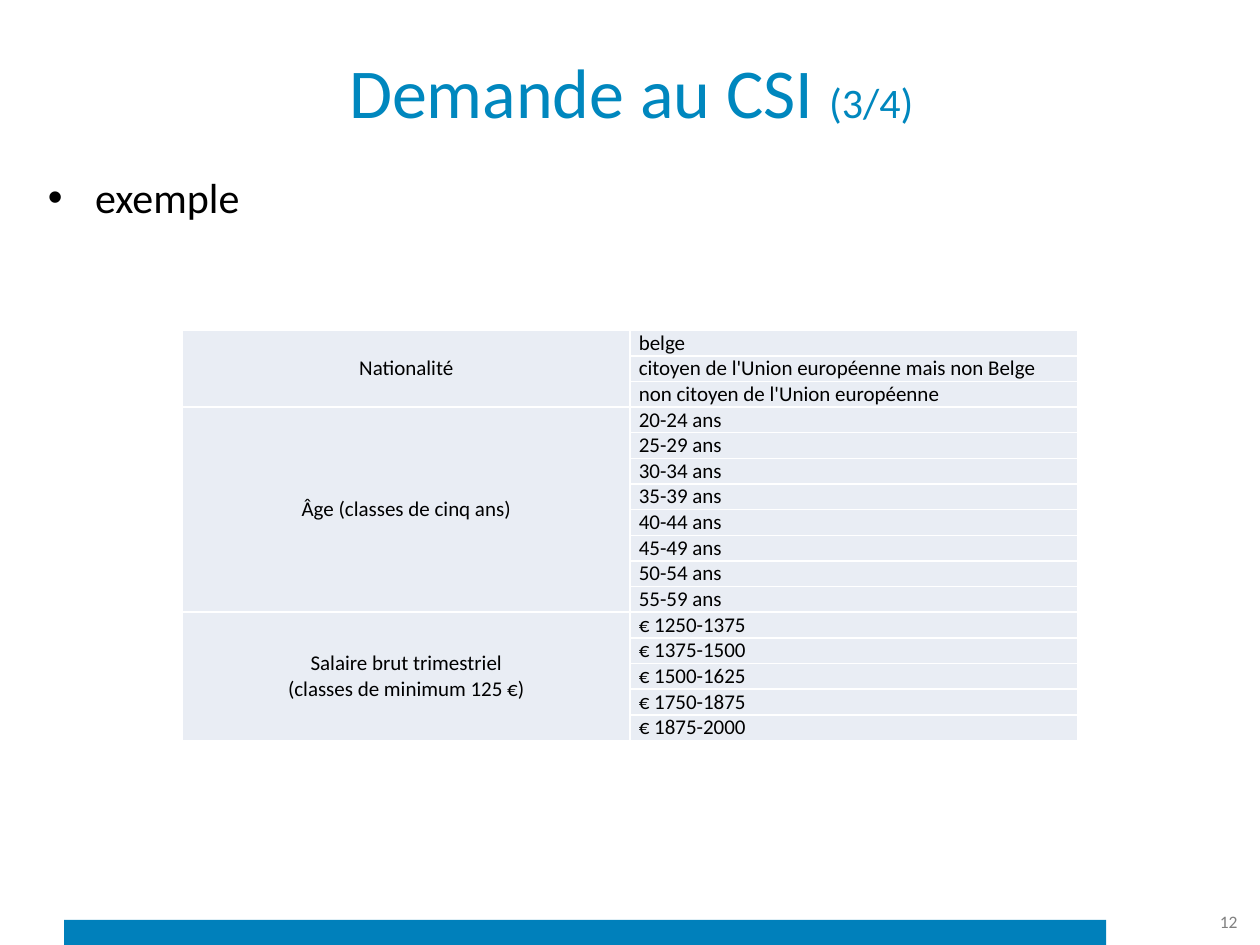
from lxml import etree
from pptx import Presentation
from pptx.dml.color import RGBColor
from pptx.enum.shapes import MSO_SHAPE
from pptx.enum.text import MSO_ANCHOR, MSO_AUTO_SIZE, PP_ALIGN
from pptx.oxml.ns import qn
from pptx.util import Inches, Pt

RECTANGLE = MSO_SHAPE.RECTANGLE
TOP, MIDDLE = MSO_ANCHOR.TOP, MSO_ANCHOR.MIDDLE
CENTER, RIGHT, JUSTIFY = PP_ALIGN.CENTER, PP_ALIGN.RIGHT, PP_ALIGN.JUSTIFY
NO_AUTOFIT = MSO_AUTO_SIZE.NONE

BAR_BLUE = RGBColor(0x00, 0x80, 0xBB)
TITLE_BLUE = RGBColor(0x00, 0x87, 0xBE)
CELL_BLUE = RGBColor(0xE9, 0xED, 0xF4)
BLACK = RGBColor(0, 0, 0)
GRAY = RGBColor(0x80, 0x80, 0x80)
WHITE = RGBColor(0xFF, 0xFF, 0xFF)

GRID_COLUMNS, GRID_ROWS = 100, 75

CRITERIA = {
    "Nationalité": [
        "belge",
        "citoyen de l'Union européenne mais non Belge",
        "non citoyen de l'Union européenne",
    ],
    "Âge (classes de cinq ans)": [f"{age}-{age + 4} ans" for age in range(20, 60, 5)],
    "Salaire brut trimestriel\n(classes de minimum 125 €)": [
        f"€ {salary}-{salary + 125}" for salary in (1250, 1375, 1500, 1750, 1875)
    ],
}


def apply(target, values):
    for name, value in values.items():
        setattr(target, name, value)


class SlideBuilder:
    """Places styled elements on a slide, measured in grid columns and rows."""

    font_name = "Calibri"

    def __init__(self, presentation):
        self.column = presentation.slide_width / GRID_COLUMNS
        self.row = presentation.slide_height / GRID_ROWS
        self.slide = presentation.slides.add_slide(presentation.slide_layouts[1])

    def area(self, left, top, width, height):
        return (round(left * self.column), round(top * self.row),
                round(width * self.column), round(height * self.row))

    def fill_frame(self, shape, runs, color, alignment, anchor):
        """Fill the first paragraph of a shape with (text, size) runs."""
        frame = shape.text_frame
        apply(frame, {"word_wrap": True, "auto_size": NO_AUTOFIT,
                      "vertical_anchor": anchor})
        paragraph = frame.paragraphs[0]
        apply(paragraph, {"alignment": alignment, "space_before": Pt(0)})
        for text, size in runs:
            run = paragraph.add_run()
            run.text = text
            apply(run.font, {"name": self.font_name, "size": Pt(size)})
            run.font.color.rgb = color

    def placeholder(self, index, area, runs, color, alignment, anchor):
        shape = self.slide.placeholders[index]
        apply(shape, dict(zip(("left", "top", "width", "height"), self.area(*area))))
        self.fill_frame(shape, runs, color, alignment, anchor)

    def text(self, area, runs, color, alignment, anchor):
        box = self.slide.shapes.add_textbox(*self.area(*area))
        self.fill_frame(box, runs, color, alignment, anchor)

    def bar(self, area, color):
        bar = self.slide.shapes.add_shape(RECTANGLE, *self.area(*area))
        bar.shadow.inherit = False
        bar.fill.solid()
        bar.fill.fore_color.rgb = color
        bar.line.fill.background()

    def cell(self, cell, text, alignment, anchor):
        apply(cell, {"margin_left": Inches(0.07), "margin_right": Inches(0.07),
                     "margin_top": 0, "margin_bottom": 0, "vertical_anchor": anchor})
        properties = cell._tc.get_or_add_tcPr()
        for side in ("a:lnL", "a:lnR", "a:lnT", "a:lnB"):
            line = etree.SubElement(properties, qn(side), w=str(Pt(1)))
            solid = etree.SubElement(line, qn("a:solidFill"))
            etree.SubElement(solid, qn("a:srgbClr"), val=str(WHITE))
        cell.fill.solid()
        cell.fill.fore_color.rgb = CELL_BLUE
        cell.text = text
        for paragraph in cell.text_frame.paragraphs:
            paragraph.alignment = alignment
            apply(paragraph.font, {"name": self.font_name, "size": Pt(12)})
            paragraph.font.color.rgb = BLACK

    def grouped_table(self, area, groups):
        """Table whose first column merges over the classes of each group."""
        row_count = sum(len(classes) for classes in groups.values())
        table = self.slide.shapes.add_table(row_count, 2, *self.area(*area)).table
        apply(table, {"first_row": False, "horz_banding": False})
        first = 0
        for criterion, classes in groups.items():
            last = first + len(classes) - 1
            for offset, label in enumerate(classes):
                self.cell(table.cell(first + offset, 0),
                          "" if offset else criterion, CENTER, MIDDLE)
                self.cell(table.cell(first + offset, 1), label, JUSTIFY, TOP)
            table.cell(first, 0).merge(table.cell(last, 0))
            first = last + 1


def main():
    presentation = Presentation()
    apply(presentation, {"slide_width": Inches(10), "slide_height": Inches(7.5)})
    builder = SlideBuilder(presentation)
    builder.bar((5.1, 73, 82.7, 2), BAR_BLUE)
    builder.placeholder(0, (5.1, 2.1, 90, 10.1),
                        [("Demande au CSI ", 40), ("(3/4)", 24)],
                        TITLE_BLUE, CENTER, MIDDLE)
    builder.placeholder(1, (2.8, 13.1, 96.4, 55.9), [("exemple", 24)],
                        BLACK, JUSTIFY, TOP)
    builder.text((91.1, 71.3, 8.1, 3.7), [("12", 10)], GRAY, RIGHT, MIDDLE)
    builder.grouped_table((14.5, 26.2, 71, 32), CRITERIA)
    presentation.save("out.pptx")


if __name__ == "__main__":
    main()
